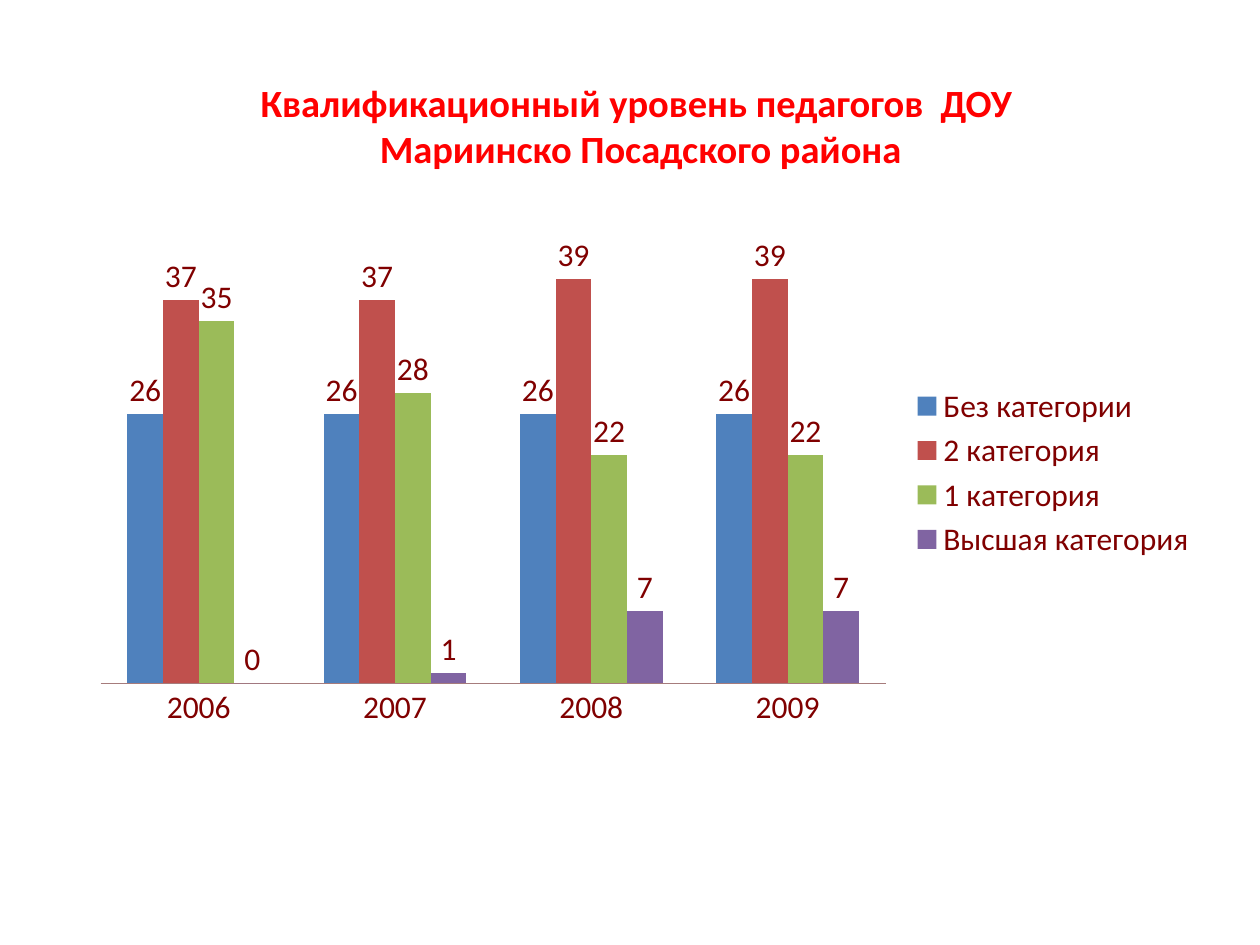
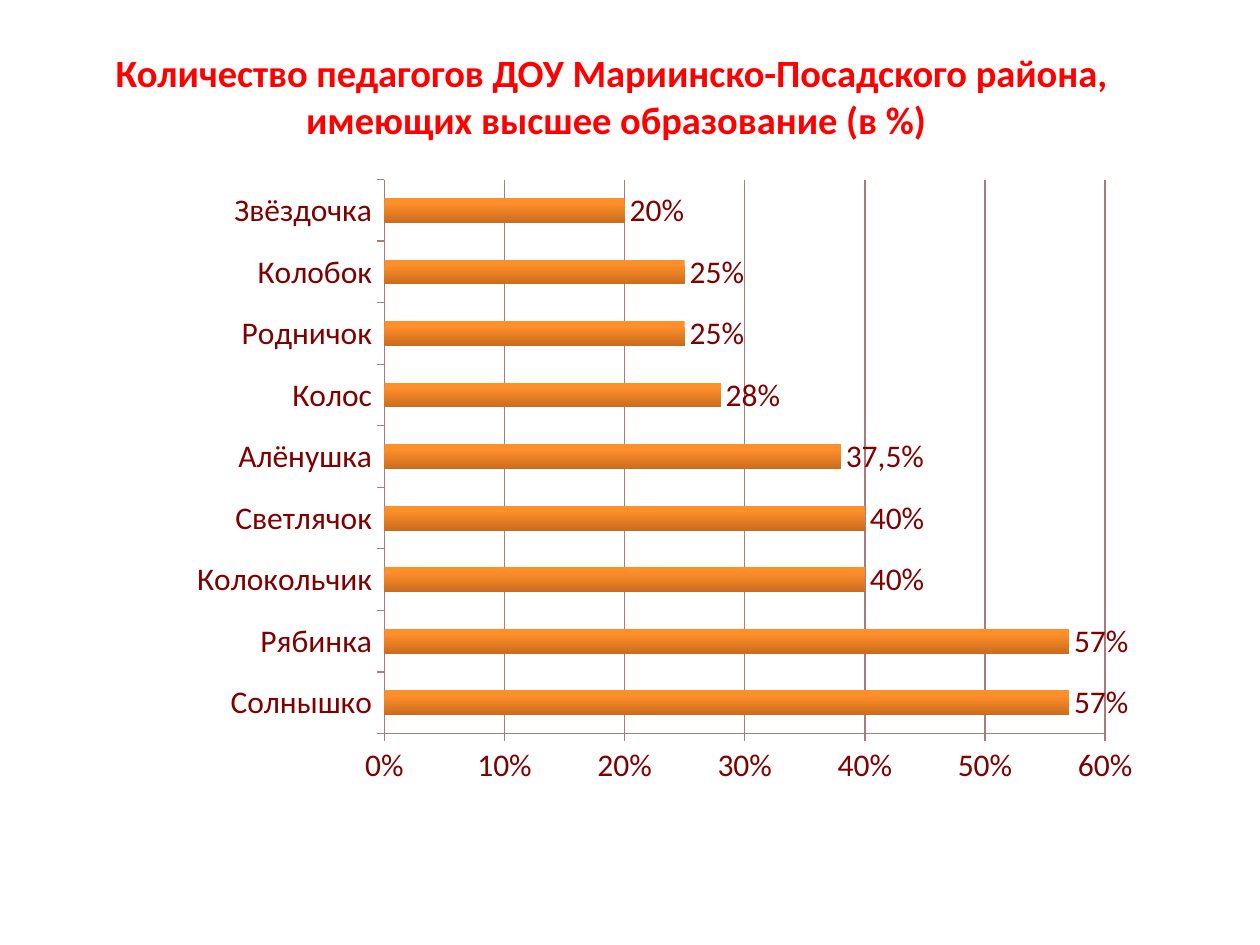
from lxml import etree
from pptx import Presentation
from pptx.chart.data import CategoryChartData
from pptx.dml.color import RGBColor
from pptx.enum.chart import XL_CHART_TYPE, XL_LABEL_POSITION, XL_LEGEND_POSITION, XL_TICK_MARK
from pptx.enum.text import MSO_ANCHOR, PP_ALIGN
from pptx.oxml import parse_xml
from pptx.oxml.ns import nsdecls, qn
from pptx.util import Cm, Pt

FONT = "Calibri"
TITLE_COLOR = "FF0000"
CHART_COLOR = "800000"
LINE_COLOR = "A67C7C"
ORANGE_TOP, ORANGE_BOTTOM = "FF8F2A", "CB6C1D"
CATEGORY_COLORS = ["4F81BD", "C0504D", "9BBB59", "8064A2"]

YEARS = ["2006", "2007", "2008", "2009"]
QUALIFICATIONS = {
    "Без категории": [26, 26, 26, 26],
    "2 категория": [37, 37, 39, 39],
    "1 категория": [35, 28, 22, 22],
    "Высшая категория": [0, 1, 7, 7],
}
KINDERGARTENS = {
    "Солнышко": 0.57,
    "Рябинка": 0.57,
    "Колокольчик": 0.4,
    "Светлячок": 0.4,
    "Алёнушка": 0.38,
    "Колос": 0.28,
    "Родничок": 0.25,
    "Колобок": 0.25,
    "Звёздочка": 0.2,
}


def color(value):
    return RGBColor.from_string(value)


def style_font(font, size, value, bold=False):
    font.name = FONT
    font.size = Pt(size)
    font.bold = bold
    font.color.rgb = color(value)


def style_line(line):
    line.color.rgb = color(LINE_COLOR)
    line.width = Pt(0.75)


def add_title(page, text, left, top, width, height):
    box = page.shapes.add_textbox(Cm(left), Cm(top), Cm(width), Cm(height))
    frame = box.text_frame
    frame.word_wrap = True
    frame.vertical_anchor = MSO_ANCHOR.MIDDLE
    frame.margin_bottom = Cm(1.07)
    frame.text = text
    para = frame.paragraphs[0]
    para.alignment = PP_ALIGN.CENTER
    style_font(para.font, 22, TITLE_COLOR, bold=True)


def place_plot(chart, box, plot_box):
    plot_area = chart.plots[0]._element.getparent()
    for previous in plot_area.findall(qn("c:layout")):
        plot_area.remove(previous)
    layout = parse_xml(f"<c:layout {nsdecls('c')}><c:manualLayout/></c:layout>")
    left, top, width, height = plot_box
    chart_width, chart_height = box[2:]
    settings = {"layoutTarget": "inner", "xMode": "edge", "yMode": "edge",
                "x": left / chart_width, "y": top / chart_height,
                "w": width / chart_width, "h": height / chart_height}
    for name, value in settings.items():
        etree.SubElement(layout[0], qn(f"c:{name}")).set("val", str(value))
    plot_area.insert(0, layout)


def add_chart(page, kind, data, box, plot_box, number_format):
    chart = page.shapes.add_chart(kind, *map(Cm, box), data).chart
    style_font(chart.font, 18, CHART_COLOR)
    chart.has_title = False
    chart.has_legend = False
    plot = chart.plots[0]
    plot.gap_width = 150
    plot.overlap = 0
    plot.vary_by_categories = False
    for series in plot.series:
        labels = series.data_labels
        labels.show_value = True
        labels.position = XL_LABEL_POSITION.OUTSIDE_END
        labels.number_format = number_format
        labels.number_format_is_linked = False
        style_font(labels.font, 18, CHART_COLOR)
    style_line(chart.category_axis.format.line)
    place_plot(chart, box, plot_box)
    return chart


def add_qualification_chart(page, box):
    data = CategoryChartData()
    data.categories = YEARS
    for name, values in QUALIFICATIONS.items():
        data.add_series(name, values)
    chart = add_chart(page, XL_CHART_TYPE.COLUMN_CLUSTERED, data, box,
                      (0.46, 0.21, 15.83, 9.4), "0")
    for series, value in zip(chart.plots[0].series, CATEGORY_COLORS):
        series.format.fill.solid()
        series.format.fill.fore_color.rgb = color(value)
    chart.category_axis.major_tick_mark = XL_TICK_MARK.NONE
    axis = chart.value_axis
    axis.minimum_scale, axis.maximum_scale = 0, 45
    axis.has_major_gridlines = False
    axis.visible = False
    chart.has_legend = True
    chart.legend.position = XL_LEGEND_POSITION.RIGHT
    chart.legend.include_in_layout = False


def add_education_chart(page, box):
    data = CategoryChartData(number_format="0%")
    data.categories = list(KINDERGARTENS)
    data.add_series("Series 1", list(KINDERGARTENS.values()))
    chart = add_chart(page, XL_CHART_TYPE.BAR_CLUSTERED, data, box,
                      (4.17, 0.24, 14.53, 11.17), "0%")
    series = chart.plots[0].series[0]
    fill = series.format.fill
    fill.gradient()
    fill.gradient_angle = 270
    for stop, value, position in zip(fill.gradient_stops, (ORANGE_TOP, ORANGE_BOTTOM), (0.2, 1)):
        stop.color.rgb = color(value)
        stop.position = position

    label = series.points[list(KINDERGARTENS).index("Алёнушка")].data_label
    label.text_frame.text = "37,5%"
    style_font(label.text_frame.paragraphs[0].font, 18, CHART_COLOR)
    label.position = XL_LABEL_POSITION.OUTSIDE_END

    axis = chart.value_axis
    axis.minimum_scale, axis.maximum_scale, axis.major_unit = 0, 0.6, 0.1
    axis.tick_labels.number_format = "0%"
    axis.tick_labels.number_format_is_linked = False
    style_line(axis.major_gridlines.format.line)
    style_line(axis.format.line)
    for each in (axis, chart.category_axis):
        each.major_tick_mark = XL_TICK_MARK.OUTSIDE


def build_qualification_page(page):
    add_title(page, "Квалификационный уровень педагогов  ДОУ\v Мариинско Посадского района",
              1.4, 1.4, 22.86, 3.18)
    add_qualification_chart(page, (1.57, 4.17, 22.81, 10.72))


def build_education_page(page):
    add_title(page, "Количество педагогов ДОУ Мариинско-Посадского района, \v"
                    "имеющих высшее образование (в %)", 0, 1.4, 24.84, 2)
    add_education_chart(page, (3.58, 3.38, 19.63, 12.7))


def main():
    deck = Presentation()
    deck.slide_width, deck.slide_height = Cm(25.4), Cm(19.05)
    for build in (build_qualification_page, build_education_page):
        build(deck.slides.add_slide(deck.slide_layouts[6]))
    deck.save("out.pptx")


if __name__ == "__main__":
    main()
